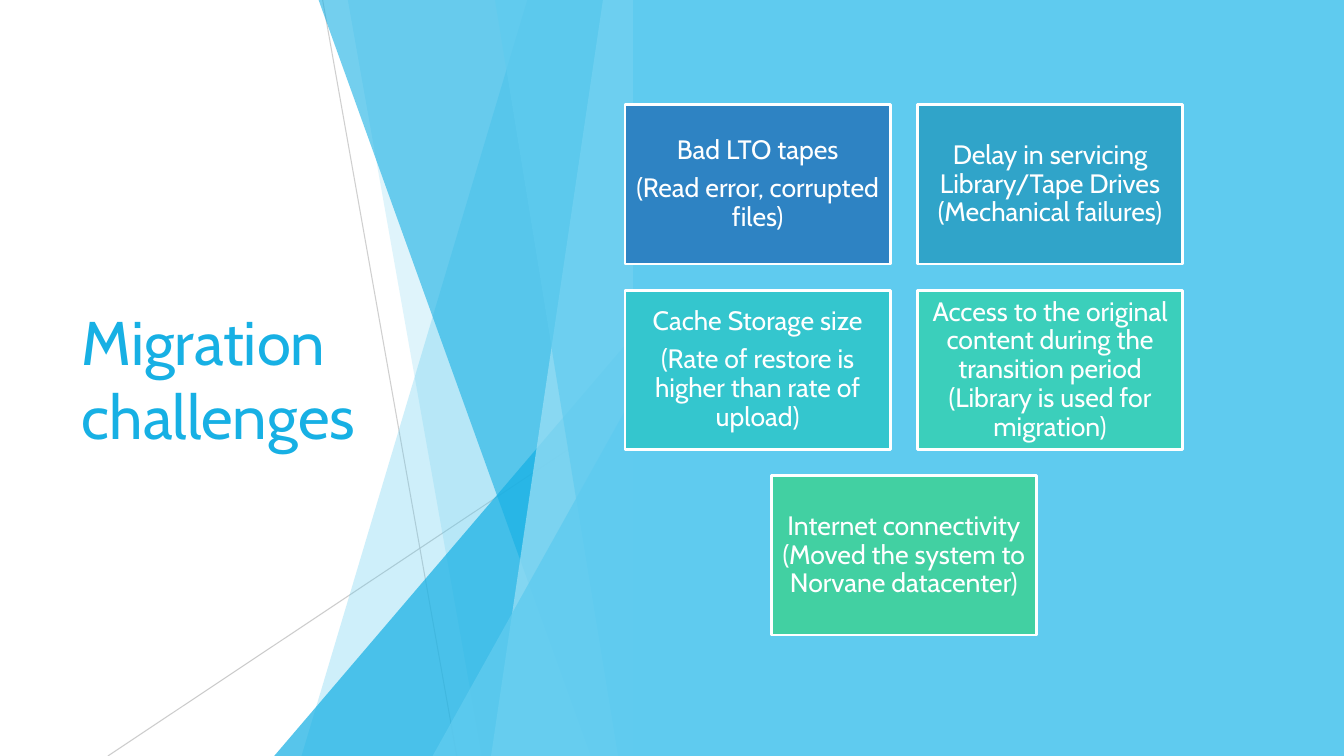
"""Build the "Migration challenges" slide with faceted shards and five cards."""
from dataclasses import dataclass

from lxml import etree
from pptx import Presentation
from pptx.dml.color import RGBColor
from pptx.enum.shapes import MSO_CONNECTOR, MSO_SHAPE
from pptx.enum.text import MSO_ANCHOR, MSO_AUTO_SIZE, PP_ALIGN
from pptx.oxml.ns import qn
from pptx.util import Inches, Pt

RECT, TRIANGLE = MSO_SHAPE.RECTANGLE, MSO_SHAPE.ISOSCELES_TRIANGLE
STRAIGHT = MSO_CONNECTOR.STRAIGHT
MIDDLE, NO_FIT = MSO_ANCHOR.MIDDLE, MSO_AUTO_SIZE.NONE
LEFT, CENTER = PP_ALIGN.LEFT, PP_ALIGN.CENTER


@dataclass(frozen=True)
class Theme:
    font: str = "Cabin"
    title_size: int = 44
    card_size: int = 19
    white: str = "FFFFFF"
    sky: str = "5FCBEF"
    blue: str = "17B0E4"
    pale: str = "9FE0F5"
    grey: str = "BFBFBF"
    cards: tuple = ("2E83C3", "30A4C9", "34C6CE", "3BCFBB", "42D0A2")


def paint(fill, color, alpha=100):
    fill.solid()
    fill.fore_color.rgb = RGBColor.from_string(color)
    if alpha < 100:
        for clr in fill._xPr.iter(qn("a:srgbClr")):
            etree.SubElement(clr, qn("a:alpha")).set("val", str(alpha * 1000))


def write(sp, paragraphs, size, color, align):
    tf = sp.text_frame
    tf.text = "\n".join(paragraphs)
    tf.word_wrap, tf.auto_size, tf.vertical_anchor = True, NO_FIT, MIDDLE
    for p in tf.paragraphs:
        p.alignment = align
        for r in p.runs:
            r.font.name, r.font.size = theme.font, Pt(size)
            r.font.color.rgb = RGBColor.from_string(color)


theme = Theme()
W, H = 13.33, 7.5
SPLIT = 6.28

prs = Presentation()
prs.slide_width, prs.slide_height = Inches(W), Inches(H)
s = prs.slides.add_slide(prs.slide_layouts[5])

rays = [(3.2, 0, 4.53, H, 75), (SPLIT, 4.03, 1.07, H, 80)]
for x1, y1, x2, y2, alpha in rays:
    ray = s.shapes.add_connector(STRAIGHT, Inches(x1), Inches(y1), Inches(x2), Inches(y2))
    ray.line.width = Pt(0.75)
    paint(ray.line.fill, theme.grey, alpha)
    etree.SubElement(ray._element.spPr, qn("a:effectLst"))

# top x, top y, bottom x, colour, opacity
shards = [
    (5.23, 0, 2.99, theme.sky, 30),
    (3.45, 0, 4.78, theme.sky, 20),
    (SPLIT, 3.33, 2.72, theme.blue, 72),
    (3.16, 0, 5.86, theme.blue, 60),
    (5.98, 0, 4.87, theme.pale, 70),
    (4.91, 0, 6.13, theme.sky, 65),
    (SPLIT, 3.93, 4.29, theme.sky, 80),
]
for top_x, top_y, bottom_x, color, alpha in shards:
    if top_x == SPLIT:
        sp = s.shapes.add_shape(TRIANGLE, Inches(bottom_x), Inches(top_y),
                                Inches(SPLIT - bottom_x), Inches(H - top_y))
        sp.adjustments[0] = 1
    else:
        outline = s.shapes.build_freeform(Inches(top_x), Inches(top_y))
        corners = [(SPLIT, top_y), (SPLIT, H), (bottom_x, H)]
        outline.add_line_segments([(Inches(x), Inches(y)) for x, y in corners])
        sp = outline.convert_to_shape()
    paint(sp.fill, color, alpha)
    sp.line.fill.background()
    sp.shadow.inherit = False

title = s.shapes.title
title.left, title.top, title.width, title.height = map(Inches, (0.71, 1.51, 3.88, 4.48))
write(title, ["Migration challenges"], theme.title_size, theme.blue, LEFT)
title._element.getparent().append(title._element)

panel = s.shapes.add_shape(RECT, Inches(SPLIT), 0, Inches(W - SPLIT), Inches(H))
paint(panel.fill, theme.sky)
panel.line.fill.background()
panel.shadow.inherit = False

CARD_X, CARD_Y, CARD_W, CARD_H = 6.2, 1.04, 2.63, 1.58
COL, ROW = 2.9, 1.84
cards = [
    (0, 0, ["Bad LTO tapes", "(Read error, corrupted files)"]),
    (1, 0, ["Delay in servicing Library/Tape Drives (Mechanical failures)"]),
    (0, 1, ["Cache Storage size", "(Rate of restore is higher than rate of upload)"]),
    (1, 1, ["Access to the original content during the transition period "
            "(Library is used for migration)"]),
    (0.5, 2, ["Internet connectivity (Moved the system to Norvane datacenter)"]),
]
for (col, row, paragraphs), color in zip(cards, theme.cards):
    card = s.shapes.add_shape(RECT, Inches(CARD_X + col * COL), Inches(CARD_Y + row * ROW),
                              Inches(CARD_W), Inches(CARD_H))
    paint(card.fill, color)
    paint(card.line.fill, theme.white)
    card.line.width = Pt(2)
    card.shadow.inherit = False
    write(card, paragraphs, theme.card_size, theme.white, CENTER)
    tf = card.text_frame
    tf.margin_left = tf.margin_right = tf.margin_top = tf.margin_bottom = Inches(0.08)
    for p in tf.paragraphs:
        p.line_spacing, p.space_after = 0.9, Pt(6.5)

prs.save("out.pptx")
